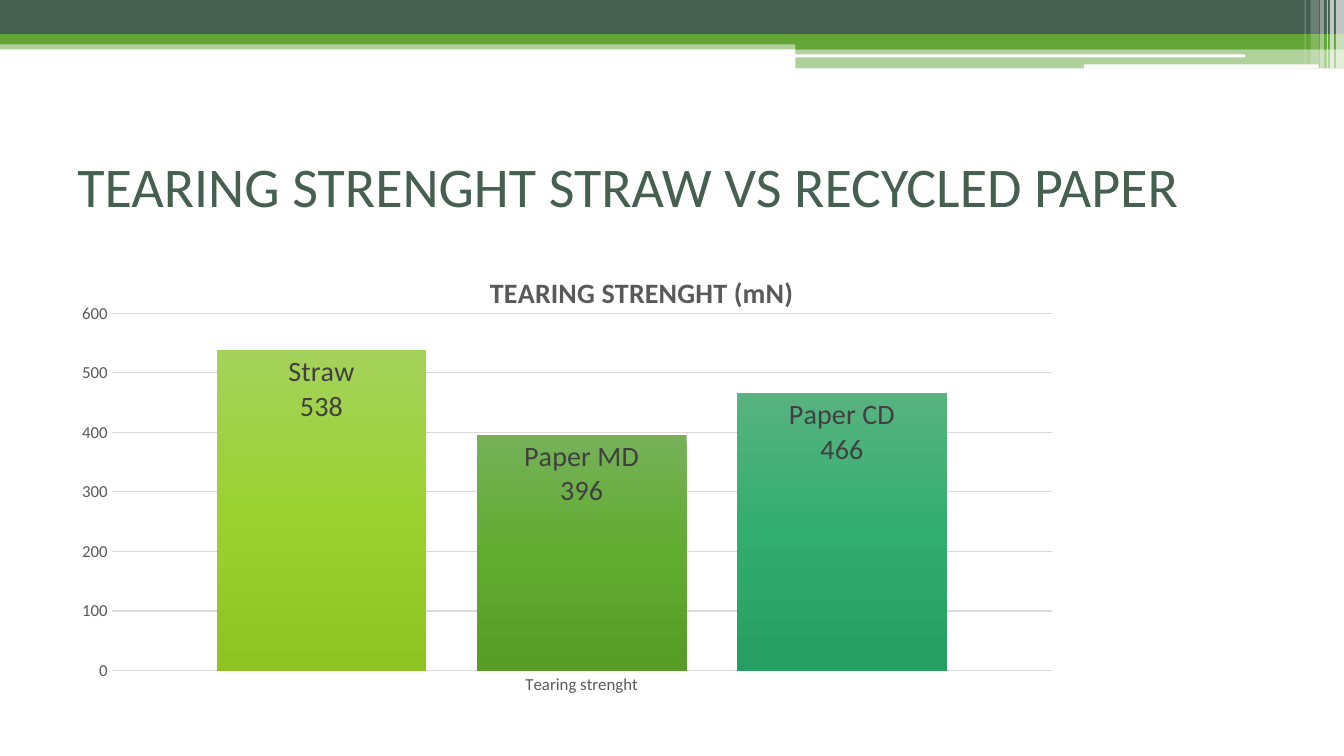
from lxml.etree import SubElement
from pptx import Presentation
from pptx.chart.data import CategoryChartData as ChartData
from pptx.dml.color import RGBColor as Rgb
from pptx.enum.chart import XL_CHART_TYPE as Kind
from pptx.enum.chart import XL_LABEL_POSITION as Spot
from pptx.enum.chart import XL_TICK_MARK as Tick
from pptx.enum.shapes import MSO_SHAPE as Form
from pptx.enum.text import MSO_ANCHOR as Anchor
from pptx.oxml import parse_xml
from pptx.oxml.ns import nsdecls, qn
from pptx.util import Inches, Pt

FONT = "Calibri"
COLORS = {
    "dark": "455F51",
    "green": "63A537",
    "white": "FFFFFF",
    "grid": "D9D9D9",
    "axis": "595959",
    "label": "404040",
}
BANDS = [
    (0, 0.4, 13.33, 0.09, "green", 50),
    (0, 0, 13.33, 0.34, "dark", 100),
    (0, 0.34, 13.33, 0.1, "green", 100),
    (7.89, 0.39, 5.44, 0.1, "green", 100),
    (7.89, 0.48, 5.44, 0.2, "green", 50),
]
LINES = [
    (7.88, 0.54, 4.47, 0.03, "white", 100),
    (10.75, 0.64, 2.33, 0.04, "white", 100),
]
STRIPES = [
    (13.25, 0.08, 0.68, 65),
    (13.19, 0.04, 0.68, 65),
    (13.16, 0.01, 0.68, 60),
    (13.09, 0.04, 0.68, 40),
    (13, 0.08, 0.64, 20),
    (12.94, 0.01, 0.64, 30),
]
BARS = [
    ("Straw", 538, ("A4D25A", "9BD231", "8DC323")),
    ("Paper MD", 396, ("76B158", "62AB31", "569C27")),
    ("Paper CD", 466, ("58B380", "31AD6F", "279E63")),
]


def color(name):
    return Rgb.from_string(COLORS[name])


def style(font, size, name, bold=False):
    font.name = FONT
    font.size = Pt(size)
    font.bold = bold
    font.color.rgb = color(name)


def add_band(slide, left, top, width, height, name, alpha, form=Form.RECTANGLE):
    band = slide.shapes.add_shape(
        form, Inches(left), Inches(top), Inches(width), Inches(height))
    band.shadow.inherit = False
    band.line.fill.background()
    band.fill.solid()
    band.fill.fore_color.rgb = color(name)
    if alpha < 100:
        tint = band.fill._xPr.find(".//" + qn("a:srgbClr"))
        SubElement(tint, qn("a:alpha"), val=str(alpha * 1000))


def add_title(slide, text):
    box = slide.shapes.add_textbox(
        Inches(0.67), Inches(1.25), Inches(12), Inches(1.17))
    frame = box.text_frame
    frame.word_wrap = True
    frame.vertical_anchor = Anchor.MIDDLE
    para = frame.paragraphs[0]
    para.text = text
    style(para.font, 40, "dark")


def set_place(node, index, **marks):
    for old in node.findall(qn("c:layout")):
        node.remove(old)
    layout = parse_xml(f"<c:layout {nsdecls('c')}/>")
    manual = SubElement(layout, qn("c:manualLayout"))
    for key, val in marks.items():
        SubElement(manual, qn("c:" + key), val=str(val))
    node.insert(index, layout)


def shade(series, tones):
    stops = "".join(
        f'<a:gs pos="{i * 50000}"><a:srgbClr val="{tone}"/></a:gs>'
        for i, tone in enumerate(tones))
    series._element.get_or_add_spPr().append(parse_xml(
        f'<a:gradFill {nsdecls("a")} rotWithShape="1"><a:gsLst>{stops}</a:gsLst>'
        '<a:lin ang="5400000" scaled="0"/></a:gradFill>'))


def label(series):
    labels = series.data_labels
    style(labels.font, 20, "label")
    labels.show_value = True
    labels.show_series_name = True
    labels.position = Spot.INSIDE_END
    mark = parse_xml(f"<c:separator {nsdecls('c')}>\n</c:separator>")
    labels._element.find(qn("c:showBubbleSize")).addnext(mark)


def set_axis(axis):
    axis.major_tick_mark = Tick.NONE
    axis.minor_tick_mark = Tick.NONE
    style(axis.tick_labels.font, 12, "axis")


def add_chart(slide):
    data = ChartData()
    data.categories = ["Tearing strenght"]
    for name, value, _ in BARS:
        data.add_series(name, [value])
    chart = slide.shapes.add_chart(
        Kind.COLUMN_CLUSTERED, Inches(0.67), Inches(2.46),
        Inches(11.5), Inches(5.04), data).chart
    style(chart.font, 10, "axis")
    chart.has_legend = False
    chart.has_title = True
    title = chart.chart_title
    para = title.text_frame.paragraphs[0]
    para.text = "TEARING STRENGHT (mN)"
    style(para.font, 20, "axis", True)
    set_place(title._element, 1, xMode="edge", yMode="edge", x=0.36, y=0.04)
    set_place(chart._chartSpace.chart.plotArea, 0, layoutTarget="inner",
              xMode="edge", yMode="edge", x=0.038, y=0.129, w=0.811, h=0.703)

    plot = chart.plots[0]
    plot.gap_width = 100
    plot.overlap = -24
    plot.vary_by_categories = False
    for series, (_, _, tones) in zip(plot.series, BARS):
        shade(series, tones)
        label(series)

    base, scale = chart.category_axis, chart.value_axis
    set_axis(base)
    base.format.line.color.rgb = color("grid")
    base.format.line.width = Pt(1)
    set_axis(scale)
    scale.minimum_scale, scale.maximum_scale, scale.major_unit = 0, 600, 100
    scale.format.line.fill.background()
    grid = scale.major_gridlines.format.line
    grid.color.rgb = color("grid")
    grid.width = Pt(0.75)


def main():
    deck = Presentation()
    deck.slide_width, deck.slide_height = Inches(13.33), Inches(7.5)
    slide = deck.slides.add_slide(deck.slide_layouts[6])
    for band in BANDS:
        add_band(slide, *band)
    for line in LINES:
        add_band(slide, *line, form=Form.ROUNDED_RECTANGLE)
    for left, width, height, alpha in STRIPES:
        add_band(slide, left, 0, width, height, "white", alpha)
    add_title(slide, "TEARING STRENGHT STRAW VS RECYCLED PAPER")
    add_chart(slide)
    deck.save("out.pptx")


if __name__ == "__main__":
    main()
